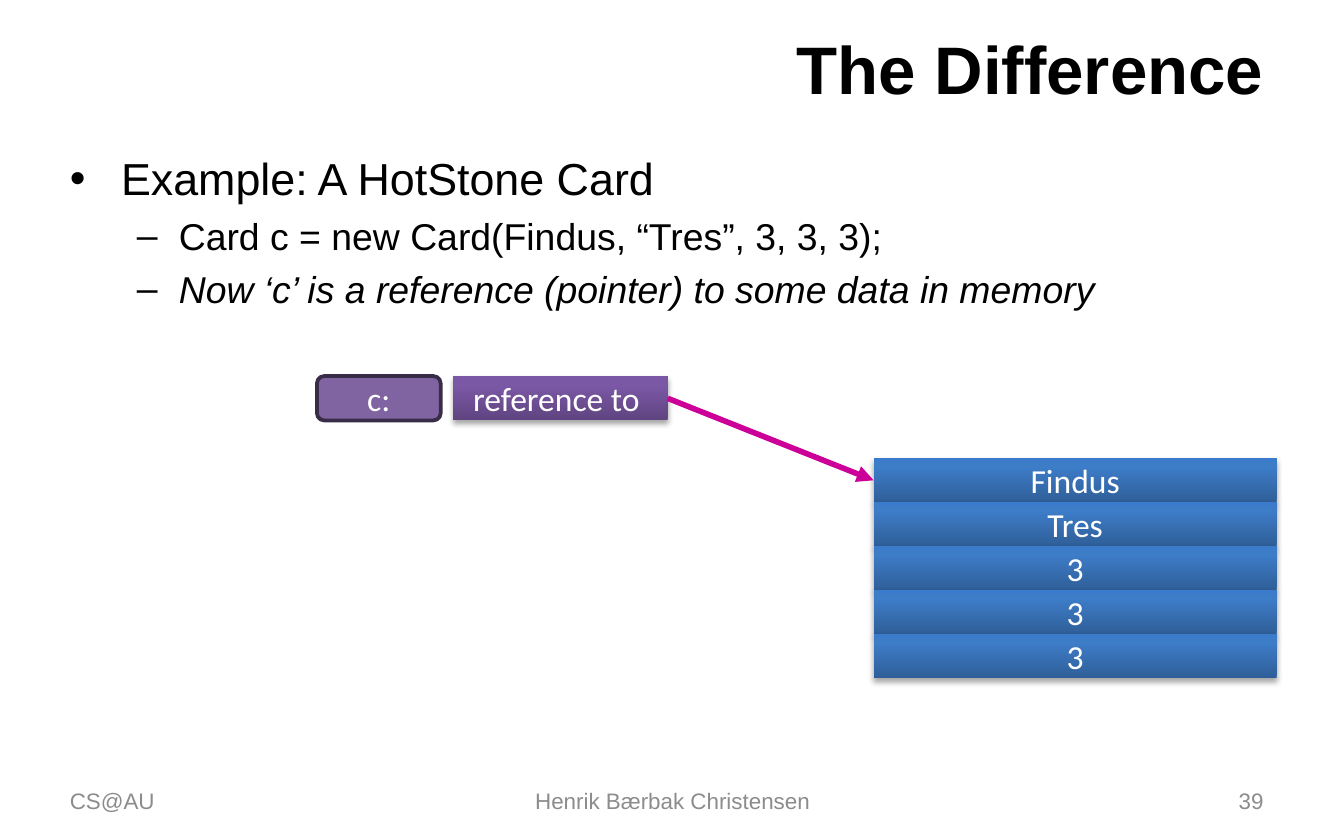
from copy import deepcopy

from lxml import etree
from pptx import Presentation
from pptx.dml.color import RGBColor
from pptx.enum import shapes, text
from pptx.oxml import ns
from pptx.util import Cm, Pt

BLACK = RGBColor(0x00, 0x00, 0x00)
WHITE = RGBColor(0xFF, 0xFF, 0xFF)
GREY = RGBColor(0x8C, 0x8C, 0x8C)
PINK = RGBColor(0xCC, 0x00, 0x99)
PURPLE = RGBColor(0x80, 0x64, 0xA2)
DARK_PURPLE = RGBColor(0x38, 0x2C, 0x47)
# Gradients run from the bottom to the top
GRADIENT_POSITIONS = (0, 0.8, 1)
BLUES = (RGBColor(0x2F, 0x5F, 0x99), RGBColor(0x3D, 0x7C, 0xC7), RGBColor(0x3A, 0x7C, 0xCB))
PURPLES = (RGBColor(0x5F, 0x44, 0x80), RGBColor(0x7B, 0x58, 0xA6), RGBColor(0x7C, 0x57, 0xA8))

LEFT, CENTER, RIGHT = text.PP_ALIGN.LEFT, text.PP_ALIGN.CENTER, text.PP_ALIGN.RIGHT
MIDDLE = text.MSO_ANCHOR.MIDDLE

BOX_HEIGHT = 0.84
FIELD_STEP = 0.83
BULLETS = [
    # wording, bullet, size, text indent, hanging indent, italic
    ("Example: A HotStone Card", "•", 24, 0.97, 0.97, False),
    ("Card c = new Card(Findus, “Tres”, 3, 3, 3);", "–", 20, 2.06, 0.79, False),
    ("Now ‘c’ is a reference (pointer) to some data in memory", "–", 20, 2.06, 0.79, True),
]
FOOTERS = [
    ("CS@AU", 1.07, 5.92, LEFT),
    ("Henrik Bærbak Christensen", 8.69, 8.05, CENTER),
    ("39", 18.21, 5.92, RIGHT),
]


def add_xml(parent, tag, **attributes):
    return etree.SubElement(parent, ns.qn(tag), attributes)


def style_font(font, size, color, name="Arial"):
    font.size = Pt(size)
    font.name = name
    font.color.rgb = color


def add_text(page, wording, left, top, width, height, size, color, align):
    box = page.shapes.add_textbox(Cm(left), Cm(top), Cm(width), Cm(height))
    frame = box.text_frame
    frame.word_wrap = True
    frame.vertical_anchor = MIDDLE
    frame.text = wording
    para = frame.paragraphs[0]
    para.alignment = align
    style_font(para.runs[0].font, size, color)
    return para.runs[0]


def add_bullets(page):
    box = page.shapes.add_textbox(Cm(1.07), Cm(2.73), Cm(23.06), Cm(11.9))
    frame = box.text_frame
    frame.word_wrap = True
    frame.text = "\n".join(item[0] for item in BULLETS)
    for para, (_, bullet, size, indent, hanging, italic) in zip(frame.paragraphs, BULLETS):
        properties = para._p.get_or_add_pPr()
        properties.set("marL", str(Cm(indent)))
        properties.set("indent", str(-Cm(hanging)))
        add_xml(properties, "a:buFont", typeface="Arial")
        add_xml(properties, "a:buChar", char=bullet)
        style_font(para.runs[0].font, size, BLACK)
        para.runs[0].font.italic = italic
    for para in frame.paragraphs[1:]:
        para.space_before = Pt(4.6)


def add_box(page, wording, left, top, width, kind=shapes.MSO_SHAPE.RECTANGLE):
    box = page.shapes.add_shape(kind, Cm(left), Cm(top), Cm(width), Cm(BOX_HEIGHT))
    box.shadow.inherit = False
    box.line.fill.background()
    frame = box.text_frame
    frame.vertical_anchor = MIDDLE
    frame.text = wording
    para = frame.paragraphs[0]
    para.alignment = CENTER
    style_font(para.runs[0].font, 18, WHITE, "Calibri")
    return box


def add_memory_cell(page, wording, left, top, width, colors):
    """Add a box with a three-colour gradient and a soft shadow below it."""
    cell = add_box(page, wording, left, top, width)
    cell.fill.gradient()
    cell.fill.gradient_angle = 90
    stop_list = cell._element.spPr.find(".//" + ns.qn("a:gsLst"))
    stop_list.append(deepcopy(stop_list[-1]))
    for stop, position, color in zip(cell.fill.gradient_stops, GRADIENT_POSITIONS, colors):
        stop.position = position
        stop.color.rgb = color
    effects = cell._element.spPr.find(ns.qn("a:effectLst"))
    shadow = add_xml(effects, "a:outerShdw", blurRad=str(Pt(3.1)), dist=str(Pt(1.8)),
                     dir="5400000", rotWithShape="0")
    shade = add_xml(shadow, "a:srgbClr", val="000000")
    add_xml(shade, "a:alpha", val="35000")
    return cell


def add_variable(page, wording, left, top, width):
    box = add_box(page, wording, left, top, width, shapes.MSO_SHAPE.ROUNDED_RECTANGLE)
    box.fill.solid()
    box.fill.fore_color.rgb = PURPLE
    box.line.color.rgb = DARK_PURPLE
    box.line.width = Pt(2)


def add_arrow(page, source, target):
    """Join the right side of source to the left side of target."""
    arrow = page.shapes.add_connector(shapes.MSO_CONNECTOR.STRAIGHT, 0, 0, 0, 0)
    arrow.begin_connect(source, 3)
    arrow.end_connect(target, 1)
    arrow.line.color.rgb = PINK
    arrow.line.width = Pt(3)
    add_xml(arrow.line._get_or_add_ln(), "a:tailEnd", type="triangle")
    add_xml(arrow._element.spPr, "a:effectLst")


def main():
    deck = Presentation()
    deck.slide_width, deck.slide_height = Cm(25.4), Cm(15.88)
    page = deck.slides.add_slide(deck.slide_layouts[6])

    title = add_text(page, "The Difference", 1.27, 0.46, 22.86, 1.65, 36, BLACK, RIGHT)
    title.font.bold = True
    add_bullets(page)
    for wording, left, width, align in FOOTERS:
        add_text(page, wording, left, 14.71, width, BOX_HEIGHT, 12, GREY, align)

    fields = [
        add_memory_cell(page, value, 16.51, 8.66 + row * FIELD_STEP, 7.62, BLUES)
        for row, value in enumerate(("Findus", "Tres", "3", "3", "3"))
    ]
    reference = add_memory_cell(page, "reference to ", 8.56, 7.11, 4.06, PURPLES)
    add_arrow(page, reference, fields[0])
    add_variable(page, "c:", 5.99, 7.11, 2.34)

    deck.save("out.pptx")


if __name__ == "__main__":
    main()
